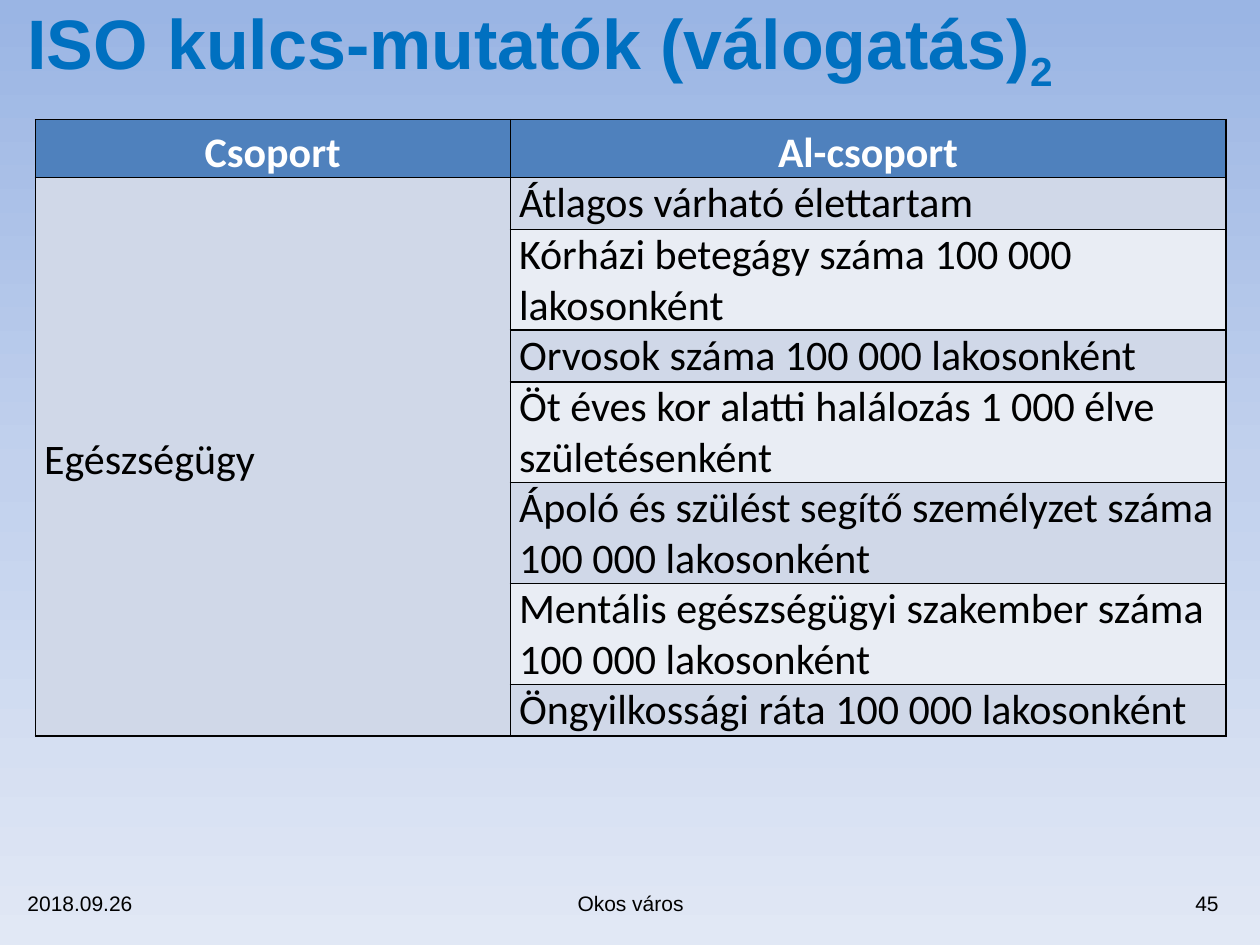
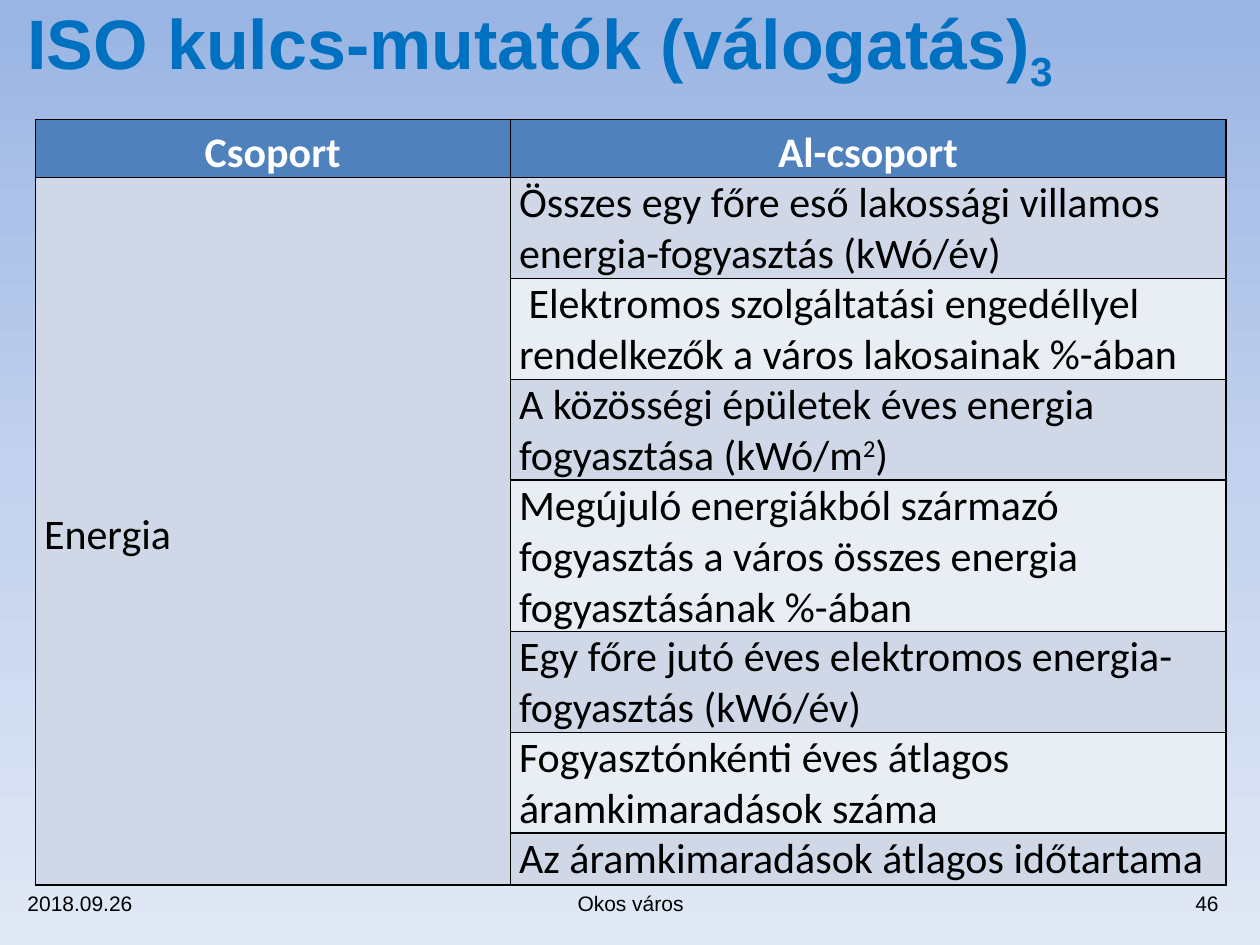
from lxml.etree import SubElement
from pptx import Presentation
from pptx.dml.color import RGBColor
from pptx.enum.text import MSO_ANCHOR, PP_ALIGN
from pptx.oxml.ns import qn
from pptx.util import Inches, Pt

# Content: a run is a string, or a (string, baseline percent) pair
TITLE = "ISO kulcs-mutatók (válogatás)"
HEADERS = ["Csoport", "Al-csoport"]
DATE, FOOTER = "2018.09.26", "Okos város"
SLIDES = [
    {
        "part": "2", "page": "45", "group": "Egészségügy",
        "indicators": [
            ["Átlagos várható élettartam"],
            ["Kórházi betegágy száma 100 000 lakosonként"],
            ["Orvosok száma 100 000 lakosonként"],
            ["Öt éves kor alatti halálozás 1 000 élve születésenként"],
            ["Ápoló és szülést segítő személyzet száma 100 000 lakosonként"],
            ["Mentális egészségügyi szakember száma 100 000 lakosonként"],
            ["Öngyilkossági ráta 100 000 lakosonként"],
        ],
    },
    {
        "part": "3", "page": "46", "group": "Energia",
        "indicators": [
            ["Összes egy főre eső lakossági villamos energia-fogyasztás (kWó/év)"],
            [" Elektromos szolgáltatási engedéllyel rendelkezők a város lakosainak %-ában"],
            ["A közösségi épületek éves energia fogyasztása (kWó/m", ("2", 30), ")"],
            ["Megújuló energiákból származó fogyasztás a város összes energia "
             "fogyasztásának %-ában"],
            ["Egy főre jutó éves elektromos energia-fogyasztás (kWó/év)"],
            ["Fogyasztónkénti éves átlagos áramkimaradások száma"],
            ["Az áramkimaradások átlagos időtartama"],
        ],
    },
]

COLORS = {
    "title": "0070C0", "header": "4F81BD", "odd": "D0D8E8", "even": "E9EDF4",
    "white": "FFFFFF", "black": "000000",
}
BACKGROUND = [(0, "9AB5E4"), (50, "C2D1ED"), (100, "E1E8F5")]
STYLES = {
    "title": ({"name": "Arial", "size": Pt(40), "bold": True}, "title"),
    "footer": ({"name": "Arial", "size": Pt(12), "bold": False}, "black"),
    "header": ({"name": "Calibri", "size": Pt(24), "bold": True}, "white"),
    "body": ({"name": "Calibri", "size": Pt(24), "bold": False}, "black"),
}

# Layout, in inches
WIDTH, HEIGHT = 10, 7.5
TITLE_BOX = (0.12, 0.08, 9.76, 0.59)
TABLE_LEFT, TABLE_TOP, ROW_HEIGHT = 0.28, 0.95, 0.41
COLUMNS = [3.77, 5.68]
FOOTER_TOP, FOOTER_HEIGHT = 6.97, 0.39
FOOTERS = [(0.12, 1.97, PP_ALIGN.LEFT), (3.43, 3.15, PP_ALIGN.CENTER),
           (7.8, 1.97, PP_ALIGN.RIGHT)]


def apply(obj, values):
    for name, value in values.items():
        setattr(obj, name, value)


def write(tf, runs, style, align=PP_ALIGN.LEFT, spacing=1.0):
    p = tf.paragraphs[0]
    apply(p, {"alignment": align, "line_spacing": spacing})
    font, color = STYLES[style]
    for run in runs:
        text, baseline = (run, 0) if isinstance(run, str) else run
        r = p.add_run()
        r.text = text
        apply(r.font, font)
        r.font.color.rgb = RGBColor.from_string(COLORS[color])
        if baseline:
            r._r.get_or_add_rPr().set("baseline", str(baseline * 1000))


def add_text(slide, box, runs, style, align=PP_ALIGN.LEFT):
    tf = slide.shapes.add_textbox(*map(Inches, box)).text_frame
    apply(tf, {"word_wrap": True, "vertical_anchor": MSO_ANCHOR.MIDDLE})
    write(tf, runs, style, align)


def paint_background(slide):
    fill = slide.background.fill
    fill.gradient()
    fill.gradient_angle = 270
    stops = slide.element.find(".//" + qn("a:gsLst"))
    for stop in list(stops):
        stops.remove(stop)
    for position, color in BACKGROUND:
        stop = SubElement(stops, qn("a:gs"), pos=str(position * 1000))
        SubElement(stop, qn("a:srgbClr"), val=color)


def format_cell(cell, fill):
    """Set margins, thin black borders and the fill; borders must precede the fill."""
    apply(cell, {"margin_left": Inches(0.07), "margin_right": Inches(0.07),
                 "margin_top": 0, "margin_bottom": 0})
    tcPr = cell._tc.get_or_add_tcPr()
    for side in ("lnL", "lnR", "lnT", "lnB"):
        ln = SubElement(tcPr, qn("a:" + side), w=str(Pt(1)))
        SubElement(SubElement(ln, qn("a:solidFill")), qn("a:srgbClr"), val=COLORS["black"])
    cell.fill.solid()
    cell.fill.fore_color.rgb = RGBColor.from_string(COLORS[fill])


def add_indicator_table(slide, group, indicators):
    rows = len(indicators) + 1
    box = (TABLE_LEFT, TABLE_TOP, sum(COLUMNS), rows * ROW_HEIGHT)
    table = slide.shapes.add_table(rows, len(COLUMNS), *map(Inches, box)).table
    table.horz_banding = False
    for column, width in zip(table.columns, COLUMNS):
        column.width = Inches(width)
    for row in range(rows):
        fill = "header" if row == 0 else "odd" if row % 2 else "even"
        for column in range(len(COLUMNS)):
            format_cell(table.cell(row, column), fill)
    for column, header in enumerate(HEADERS):
        write(table.cell(0, column).text_frame, [header], "header", PP_ALIGN.CENTER, 1.15)
    for row, runs in enumerate(indicators, 1):
        write(table.cell(row, 1).text_frame, runs, "body")
    group_cell = table.cell(1, 0)
    group_cell.merge(table.cell(rows - 1, 0))
    group_cell.vertical_anchor = MSO_ANCHOR.MIDDLE
    write(group_cell.text_frame, [group], "body", spacing=1.15)


def main():
    prs = Presentation()
    prs.slide_width, prs.slide_height = Inches(WIDTH), Inches(HEIGHT)
    for content in SLIDES:
        slide = prs.slides.add_slide(prs.slide_layouts[6])
        paint_background(slide)
        add_text(slide, TITLE_BOX, [TITLE, (content["part"], -25)], "title")
        add_indicator_table(slide, content["group"], content["indicators"])
        for (left, width, align), text in zip(FOOTERS, [DATE, FOOTER, content["page"]]):
            box = (left, FOOTER_TOP, width, FOOTER_HEIGHT)
            add_text(slide, box, [text], "footer", align)
    prs.save("out.pptx")


if __name__ == "__main__":
    main()
